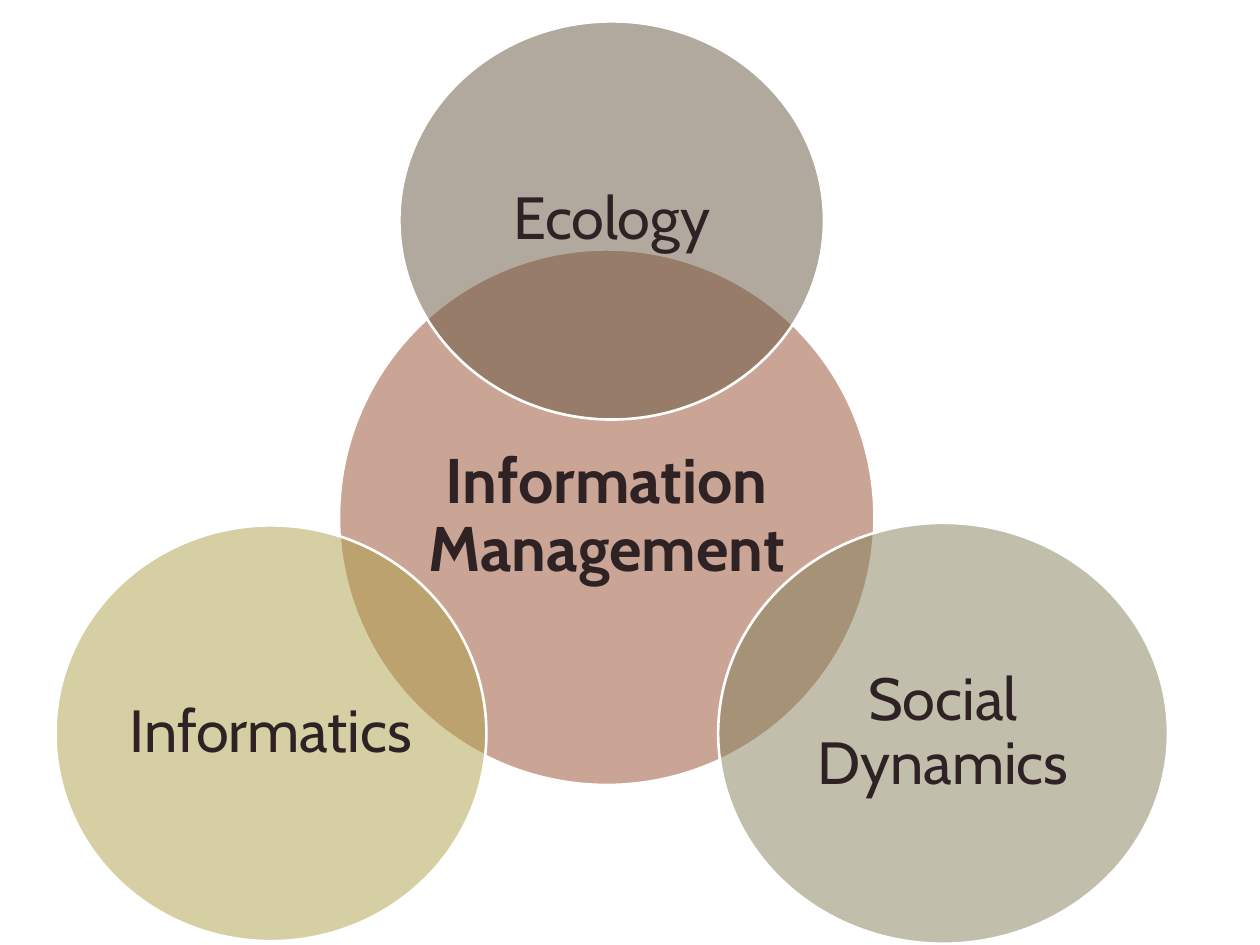
from dataclasses import dataclass

from lxml.etree import SubElement
from pptx import Presentation
from pptx.dml.color import RGBColor
from pptx.enum.shapes import MSO_SHAPE
from pptx.enum.text import MSO_ANCHOR, PP_ALIGN
from pptx.oxml.ns import qn
from pptx.util import Inches, Pt

FONT = "Cabin"
TEXT_COLOR = "2E2224"
OUTLINE_COLOR = "FFFFFF"
OPACITY = 50
INSET = Inches(0.05)


@dataclass
class Circle:
    label: str
    left: float
    top: float
    width: float
    height: float
    color: str
    size: int = 34
    bold: bool = False


CIRCLES = [
    Circle("Information Management", 2.69, 1.98, 4.25, 4.25, "964D2C", 36, True),
    Circle("Ecology", 3.17, 0.17, 3.37, 3.16, "66553E"),
    Circle("Social Dynamics", 5.7, 4.15, 3.57, 3.34, "848058"),
    Circle("Informatics", 0.44, 4.17, 3.42, 3.3, "AFA14B"),
]


def set_color(target, color: str) -> None:
    """Colour a fill or a font from a hex string."""
    if hasattr(target, "solid"):
        target.solid()
        target.fore_color.rgb = RGBColor.from_string(color)
    else:
        target.color.rgb = RGBColor.from_string(color)


def set_opacity(sp, percent: int) -> None:
    fill_color = sp.fill._xPr.find(qn("a:solidFill"))[0]
    SubElement(fill_color, qn("a:alpha")).set("val", str(percent * 1000))


def add_circle(s, circle: Circle) -> None:
    sp = s.shapes.add_shape(
        MSO_SHAPE.OVAL,
        Inches(circle.left), Inches(circle.top),
        Inches(circle.width), Inches(circle.height),
    )
    sp.shadow.inherit = False
    set_color(sp.fill, circle.color)
    set_opacity(sp, OPACITY)
    set_color(sp.line, OUTLINE_COLOR)
    sp.line.width = Pt(1.5)

    tf = sp.text_frame
    tf.word_wrap = True
    tf.vertical_anchor = MSO_ANCHOR.MIDDLE
    tf.margin_left = tf.margin_right = INSET
    tf.margin_top = tf.margin_bottom = INSET
    p = tf.paragraphs[0]
    p.alignment = PP_ALIGN.CENTER
    p.line_spacing = 0.9
    r = p.add_run()
    r.text = circle.label
    r.font.name = FONT
    r.font.size = Pt(circle.size)
    r.font.bold = circle.bold
    set_color(r.font, TEXT_COLOR)


def main() -> None:
    prs = Presentation()
    prs.slide_width = Inches(10)
    prs.slide_height = Inches(7.5)
    s = prs.slides.add_slide(prs.slide_layouts[6])
    for circle in CIRCLES:
        add_circle(s, circle)
    prs.save("out.pptx")


if __name__ == "__main__":
    main()
